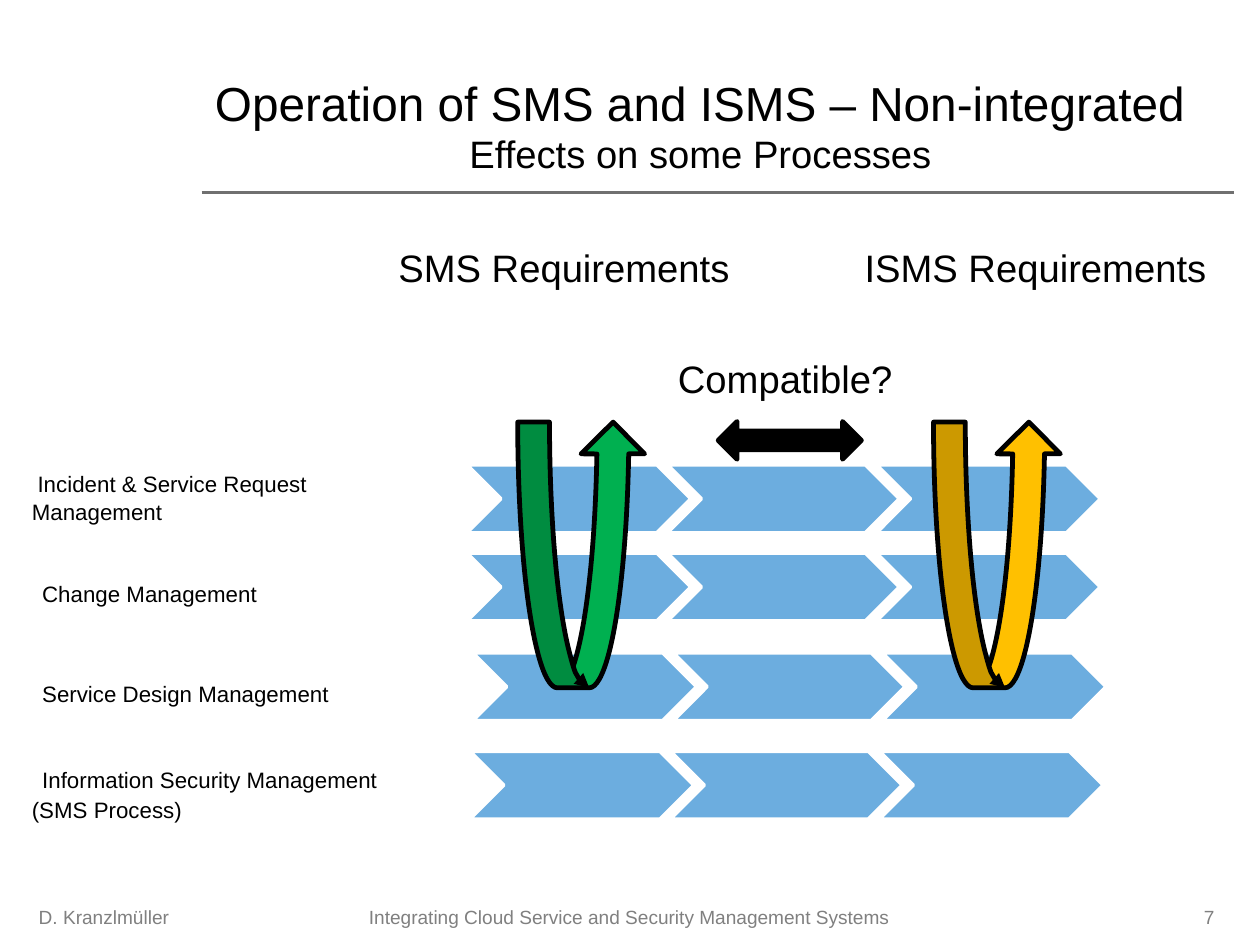
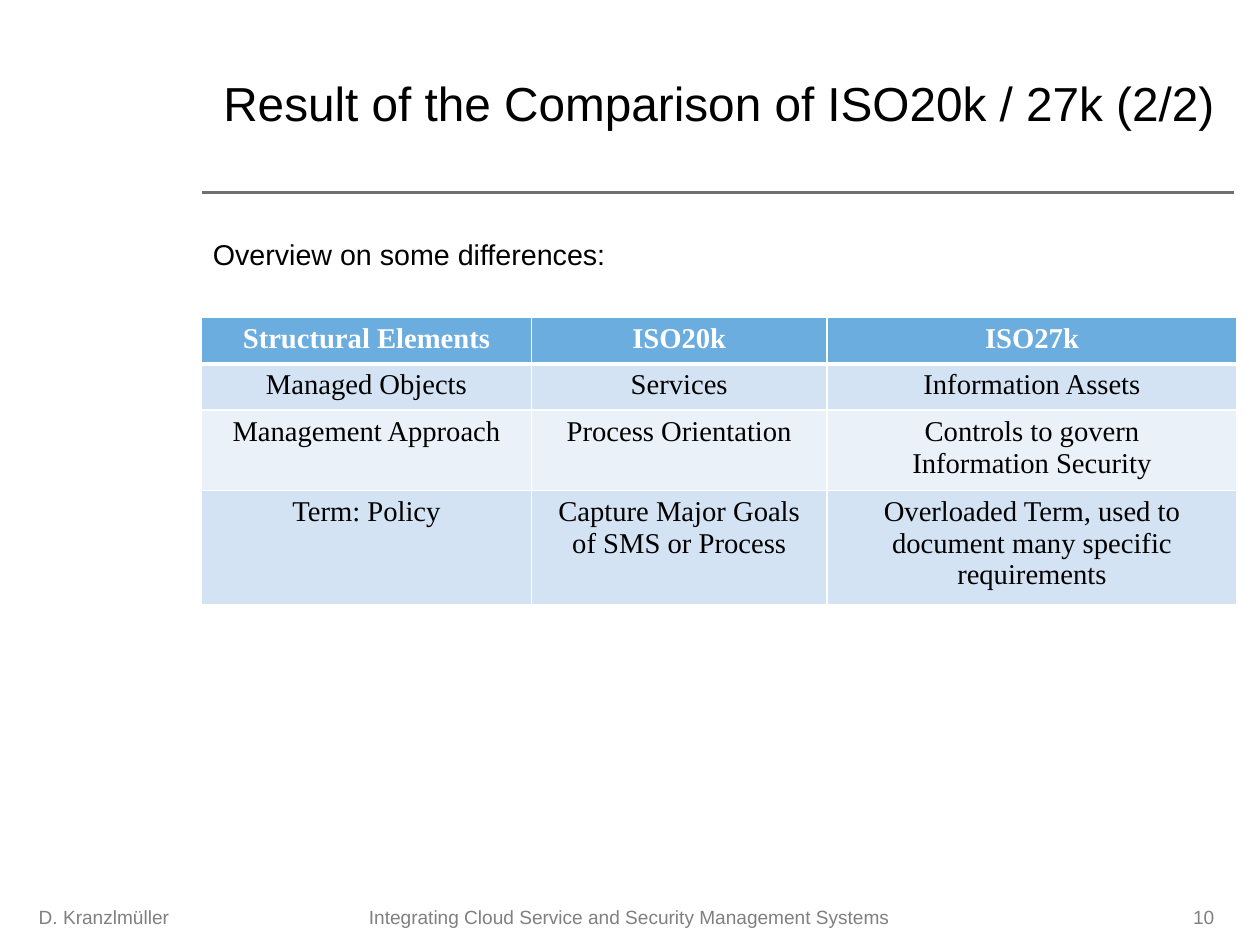
from dataclasses import dataclass

from lxml import etree
from pptx import Presentation
from pptx.dml.color import RGBColor
from pptx.enum.shapes import MSO_CONNECTOR, MSO_SHAPE
from pptx.enum.text import MSO_ANCHOR, MSO_AUTO_SIZE, PP_ALIGN
from pptx.oxml.ns import qn
from pptx.util import Emu, Inches, Pt

LEFT, CENTER, RIGHT = PP_ALIGN.LEFT, PP_ALIGN.CENTER, PP_ALIGN.RIGHT
TOP, MIDDLE = MSO_ANCHOR.TOP, MSO_ANCHOR.MIDDLE
CHEVRON, CURVED_ARROW = MSO_SHAPE.CHEVRON, MSO_SHAPE.CURVED_UP_ARROW
DOUBLE_ARROW = MSO_SHAPE.LEFT_RIGHT_ARROW
STRAIGHT = MSO_CONNECTOR.STRAIGHT
NO_AUTOFIT = MSO_AUTO_SIZE.NONE

COLUMNS, ROWS = 44, 33
TITLE_ONLY = 5
CONTENT_LEFT = 7.04


@dataclass(frozen=True)
class Theme:
    font: str = "Arial"
    table_font: str = "Times New Roman"
    black: str = "000000"
    white: str = "FFFFFF"
    rule: str = "707070"
    footer: str = "808080"
    blue: str = "6CADDF"
    bands: tuple = ("D4E3F3", "EBF1F9")
    green: str = "00B050"
    amber: str = "FFC000"
    title_size: int = 30
    heading_size: int = 24
    body_size: int = 18
    label_size: int = 14
    footer_size: int = 12


def color(value):
    return RGBColor.from_string(value)


def write_text(frame, text, *, sizes, font, ink, align=LEFT, anchor=MIDDLE,
               bold=False, wrap=True, indent=0, spacing=None):
    """Fill a frame, one paragraph a line; the last size serves the remaining lines."""
    frame.word_wrap = wrap
    frame.vertical_anchor = anchor
    for number, line in enumerate(text.split("\n")):
        para = frame.paragraphs[0] if number == 0 else frame.add_paragraph()
        para.alignment = align
        if spacing:
            para.line_spacing = spacing
        if indent:
            para._p.get_or_add_pPr().set("indent", str(Inches(indent)))
        span = para.add_run()
        span.text = line
        span.font.name = font
        span.font.size = Pt(sizes[min(number, len(sizes) - 1)])
        span.font.bold = bold
        span.font.color.rgb = color(ink)


class SlideBuilder:
    def __init__(self, deck, theme):
        self.deck, self.theme, self.page = deck, theme, None

    def across(self, columns):
        return Emu(round(self.deck.slide_width * columns / COLUMNS))

    def down(self, rows):
        return Emu(round(self.deck.slide_height * rows / ROWS))

    def place(self, left, top, width, height):
        return self.across(left), self.down(top), self.across(width), self.down(height)

    def start(self, title, number, title_width):
        """Add a page with its title, rule and footers."""
        theme = self.theme
        self.page = self.deck.slides.add_slide(self.deck.slide_layouts[TITLE_ONLY])
        self.rule(CONTENT_LEFT, 43.08, 6.72)
        self.title(title, title_width)
        for text, area, align in (
            ("D. Kranzlmüller", (0.96, 8.16), LEFT),
            ("Integrating Cloud Service and Security Management Systems", (9.76, 24.44), CENTER),
            (number, (38.52, 4.28), RIGHT),
        ):
            left, width = area
            self.text(text, left, 31.04, width, 1.96, sizes=[theme.footer_size],
                      ink=theme.footer, align=align)

    def title(self, text, width):
        theme = self.theme
        box = self.page.shapes.title
        box.left, box.top, box.width, box.height = self.place(CONTENT_LEFT, 2.4, width, 4)
        frame = box.text_frame
        frame.auto_size = NO_AUTOFIT
        frame.margin_left = frame.margin_right = Inches(0.08)
        frame.margin_top = frame.margin_bottom = Inches(0.04)
        write_text(frame, text, sizes=[theme.title_size, theme.heading_size],
                   font=theme.font, ink=theme.black, align=CENTER, anchor=TOP)

    def rule(self, start, end, row):
        line = self.page.shapes.add_connector(
            STRAIGHT, self.across(start), self.down(row), self.across(end), self.down(row))
        line.line.color.rgb = color(self.theme.rule)
        line.line.width = Pt(1.5)
        etree.SubElement(line._element.spPr, qn("a:effectLst"))

    def text(self, text, left, top, width, height, **style):
        box = self.page.shapes.add_textbox(*self.place(left, top, width, height))
        style = {"font": self.theme.font, "ink": self.theme.black, **style}
        write_text(box.text_frame, text, **style)

    def shape(self, kind, area, fill, line, line_width, parent=None, arrowhead=False):
        shapes = (parent or self.page).shapes
        shape = shapes.add_shape(kind, *self.place(*area))
        shape.shadow.inherit = False
        shape.fill.solid()
        shape.fill.fore_color.rgb = color(fill)
        shape.line.color.rgb = color(line)
        shape.line.width = Pt(line_width)
        if arrowhead:
            etree.SubElement(shape.line._get_or_add_ln(), qn("a:tailEnd"), type="triangle")

    def process(self, left, top):
        """Draw one process as a group of three chevrons."""
        group = self.page.shapes.add_group_shape()
        for offset, width in ((0, 7.8), (7, 8.08), (14.3, 7.8)):
            self.shape(CHEVRON, (left + offset, top, width, 2.36), self.theme.blue,
                       self.theme.white, 2, parent=group)

    def cell_borders(self, cell, widths):
        properties = cell._tc.get_or_add_tcPr()
        for side, width in widths.items():
            line = etree.SubElement(properties, qn(f"a:ln{side}"), w=str(Pt(width)))
            fill = etree.SubElement(line, qn("a:solidFill"))
            etree.SubElement(fill, qn("a:srgbClr"), val=self.theme.white)

    def table(self, records, left, top, widths, heights):
        theme = self.theme
        frame = self.page.shapes.add_table(
            len(records), len(widths), *self.place(left, top, sum(widths), sum(heights)))
        table = frame.table
        for column, width in zip(table.columns, widths):
            column.width = self.across(width)
        for number, (record, height) in enumerate(zip(records, heights)):
            table.rows[number].height = self.down(height)
            header = number == 0
            for column, text in enumerate(record):
                cell = table.cell(number, column)
                self.cell_borders(cell, {"L": 1, "R": 1, "T": 3 if number == 1 else 1,
                                         "B": 3 if header else 1})
                cell.fill.solid()
                fill = theme.blue if header else theme.bands[(number - 1) % 2]
                cell.fill.fore_color.rgb = color(fill)
                cell.vertical_anchor = TOP
                write_text(cell.text_frame, text, sizes=[theme.body_size],
                           font=theme.table_font, align=CENTER, bold=header, anchor=None,
                           wrap=None, ink=theme.white if header else theme.black)


def build_operation(slide):
    theme = slide.theme
    slide.start("Operation of SMS and ISMS – Non-integrated\nEffects on some Processes",
                "7", 34.84)
    for text, left, top, width in (
        ("SMS Requirements", 13.52, 8.04, 12.44),
        ("ISMS Requirements", 29.8, 8.04, 13.44),
        ("Compatible?", 23.28, 11.92, 8.56),
    ):
        slide.text(text, left, top, width, 2.56, sizes=[theme.heading_size])

    for text, label_top, indent, spacing, left, top in (
        ("Incident & Service Request Management", 16.08, 0.05, 1.05, 16.32, 16.24),
        ("Change Management", 19.45, 0.09, None, 16.32, 19.32),
        ("Service Design Management", 22.93, 0.09, None, 16.52, 22.8),
        ("Information Security Management (SMS Process)", 26.4, 0.09, 1.15, 16.42, 26.24),
    ):
        slide.text(text, 0.72, label_top, 13.3, 2.56, sizes=[theme.label_size],
                   indent=indent, spacing=spacing)
        slide.process(left, top)

    slide.shape(DOUBLE_ARROW, (25.08, 14.72, 5, 1.32), theme.black, theme.black, 3)
    for left, fill in ((18.08, theme.green), (32.6, theme.amber)):
        slide.shape(CURVED_ARROW, (left, 14.74, 4.44, 9.28), fill, theme.black, 3,
                    arrowhead=True)


def build_comparison(slide):
    slide.start("Result of the Comparison of ISO20k / 27k (2/2)", "10", 36.16)
    slide.text("Overview on some differences:", CONTENT_LEFT, 7.88, 34.76, 2,
               sizes=[slide.theme.body_size])
    records = (
        ("Structural Elements", "ISO20k", "ISO27k"),
        ("Managed Objects", "Services", "Information Assets"),
        ("Management Approach", "Process Orientation",
         "Controls to govern\nInformation Security"),
        ("Term: Policy", "Capture Major Goals of SMS or Process",
         "Overloaded Term, used to document many specific requirements"),
    )
    slide.table(records, CONTENT_LEFT, 11.08, (11.52, 10.32, 14.32), (1.62, 1.62, 2.62, 3.7))


def main():
    deck = Presentation()
    deck.slide_width, deck.slide_height = Inches(11), Inches(8.25)
    slide = SlideBuilder(deck, Theme())
    build_operation(slide)
    build_comparison(slide)
    deck.save("out.pptx")


if __name__ == "__main__":
    main()
